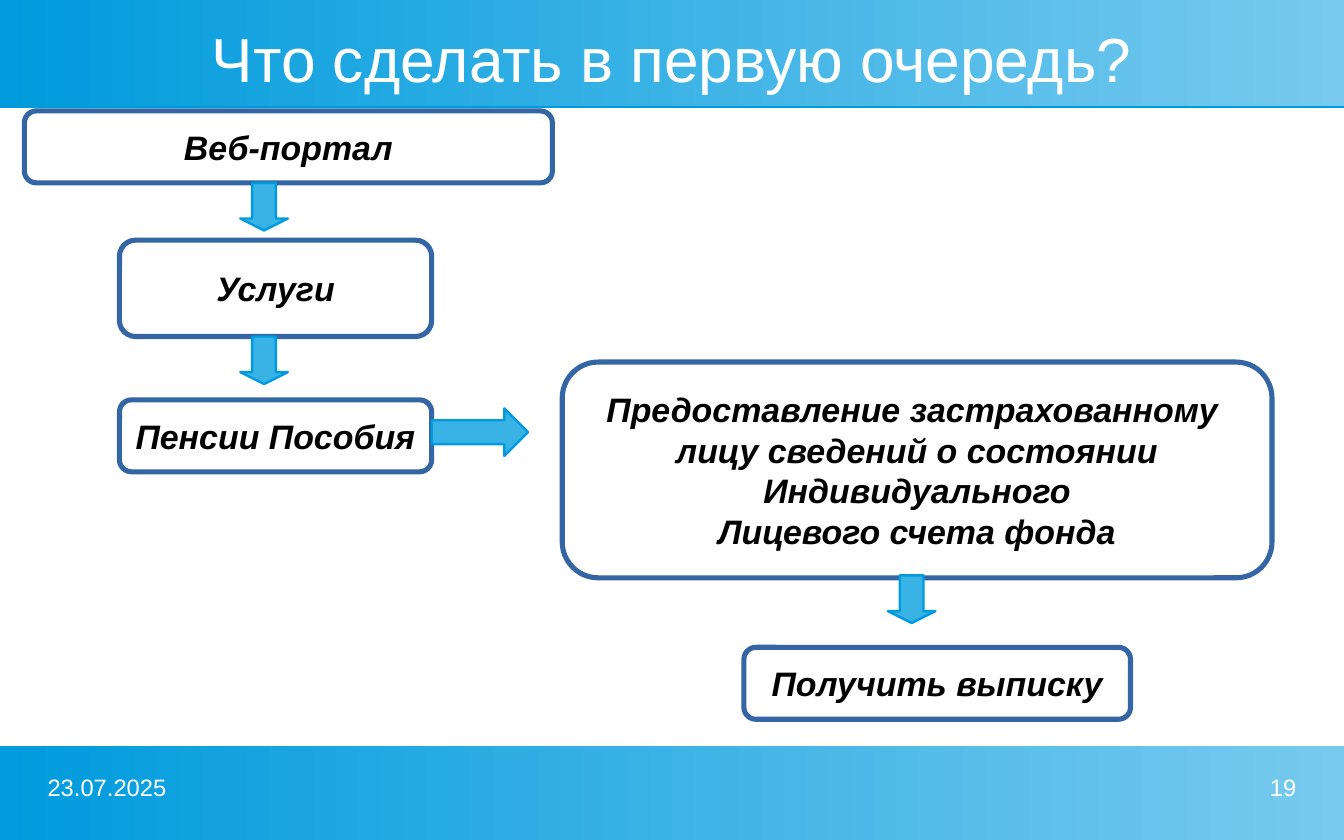
"""Build the flow slide about what to do first."""
import dataclasses
import typing

import lxml.etree
import pptx
import pptx.dml.color
import pptx.enum.shapes
import pptx.enum.text
import pptx.oxml.ns
import pptx.util

Inches = pptx.util.Inches
Pt = pptx.util.Pt
Kind = pptx.enum.shapes.MSO_SHAPE
Align = pptx.enum.text.PP_ALIGN
Anchor = pptx.enum.text.MSO_ANCHOR

PAGE_WIDTH, PAGE_HEIGHT = 11.02, 6.89
MARGIN = 0.39
ARROW = 0.39


@dataclasses.dataclass(frozen=True)
class Theme:
    """Colours and type sizes of the slide."""
    font: str = "Arial"
    white: str = "FFFFFF"
    ink: str = "000000"
    border: str = "3465A4"
    band_light: str = "77CAEE"
    band_dark: str = "009BDD"
    arrow: str = "39B2E5"
    title_size: float = 36.7
    step_size: float = 20
    footer_size: float = 14
    border_width: float = 3
    arrow_width: float = 1.42


THEME = Theme()


class Place(typing.NamedTuple):
    """Left, top, width and height in inches."""
    left: float
    top: float
    width: float
    height: float

    def lengths(self) -> list:
        """Return the four values as lengths."""
        return [Inches(value) for value in self]


class Step(typing.NamedTuple):
    """A rounded box of the flow."""
    place: Place
    lines: tuple


class Arrow(typing.NamedTuple):
    """A block arrow between two steps."""
    kind: Kind
    place: Place
    head: float


class Caption(typing.NamedTuple):
    """Plain white text on a band."""
    place: Place
    text: str
    size: float
    align: Align
    anchor: Anchor
    spacing: float


BANDS = (
    Place(0, 0, PAGE_WIDTH, 0.87),
    Place(0, 6.12, PAGE_WIDTH, 0.77),
)
STEPS = (
    Step(Place(0.2, 0.91, 4.33, 0.59), ("Веб-портал",)),
    Step(Place(0.98, 1.97, 2.56, 0.79), ("Услуги",)),
    Step(Place(0.98, 3.28, 2.56, 0.59), ("Пенсии Пособия",)),
    Step(Place(4.61, 2.97, 5.82, 1.77), (
        "Предоставление застрахованному ",
        "лицу сведений о состоянии",
        "Индивидуального",
        "Лицевого счета фонда",
    )),
    Step(Place(6.1, 5.31, 3.17, 0.59), ("Получить выписку",)),
)
ARROWS = (
    Arrow(Kind.DOWN_ARROW, Place(1.97, 1.5, ARROW, ARROW), 0.25),
    Arrow(Kind.DOWN_ARROW, Place(1.97, 2.76, ARROW, ARROW), 0.25),
    Arrow(Kind.RIGHT_ARROW, Place(3.54, 3.35, 0.79, ARROW), 0.5),
    Arrow(Kind.DOWN_ARROW, Place(7.28, 4.72, ARROW, ARROW), 0.25),
)
CAPTIONS = (
    Caption(Place(MARGIN, 0.22, 10.24, 0.58), "Что сделать в первую очередь?",
            THEME.title_size, Align.CENTER, Anchor.MIDDLE, 0.9),
    Caption(Place(8.07, 6.34, 2.56, 0.44), "19",
            THEME.footer_size, Align.RIGHT, Anchor.TOP, 1.0),
    Caption(Place(MARGIN, 6.34, 2.56, 0.44), "23.07.2025",
            THEME.footer_size, Align.LEFT, Anchor.TOP, 1.0),
)


def apply(target: typing.Any, values: dict) -> None:
    """Set every attribute named in the values."""
    for name, value in values.items():
        setattr(target, name, value)


def colour(code: str) -> pptx.dml.color.RGBColor:
    """Turn a hex code into a colour."""
    return pptx.dml.color.RGBColor.from_string(code)


def write(box: typing.Any, lines: tuple, ink: str, frame: dict,
          layout: dict, style: dict) -> None:
    """Put one paragraph per line into a box."""
    apply(box.text_frame, frame)
    for index, line in enumerate(lines):
        para = box.text_frame.add_paragraph() if index else box.text_frame.paragraphs[0]
        apply(para, layout)
        span = para.add_run()
        span.text = line
        apply(span.font, {"name": THEME.font, **style})
        span.font.color.rgb = colour(ink)


def draw_shape(page: typing.Any, kind: Kind, place: Place, fill: str,
               line: str, width: float) -> typing.Any:
    """Draw a filled and outlined preset shape."""
    box = page.shapes.add_shape(kind, *place.lengths())
    box.shadow.inherit = False
    box.fill.solid()
    box.fill.fore_color.rgb = colour(fill)
    box.line.color.rgb = colour(line)
    box.line.width = Pt(width)
    return box


def draw_band(page: typing.Any, place: Place) -> None:
    """Draw a gradient band with a thin lower shadow."""
    box = page.shapes.add_shape(Kind.RECTANGLE, *place.lengths())
    box.shadow.inherit = False
    box.line.fill.background()
    box.fill.gradient()
    box.fill.gradient_angle = 180
    codes = (THEME.band_light, THEME.band_dark)
    for position, (stop, code) in enumerate(zip(box.fill.gradient_stops, codes)):
        stop.color.rgb = colour(code)
        stop.position = position
    name = pptx.oxml.ns.qn
    effects = box.element.spPr.find(name("a:effectLst"))
    shadow = lxml.etree.SubElement(effects, name("a:outerShdw"), {
        "blurRad": "0", "dist": str(Pt(0.9)), "dir": "5400000", "rotWithShape": "0"})
    lxml.etree.SubElement(shadow, name("a:srgbClr"), {"val": THEME.band_dark})


def draw_step(page: typing.Any, step: Step) -> None:
    """Draw a rounded box with its bold italic lines."""
    box = draw_shape(page, Kind.ROUNDED_RECTANGLE, step.place,
                     THEME.white, THEME.border, THEME.border_width)
    side, edge = Inches(0.11), Inches(0.06)
    write(box, step.lines, THEME.ink,
          {"margin_left": side, "margin_right": side, "margin_top": edge,
           "margin_bottom": edge, "word_wrap": False,
           "vertical_anchor": Anchor.MIDDLE},
          {"alignment": Align.CENTER},
          {"size": Pt(THEME.step_size), "bold": True, "italic": True})


def draw_arrow(page: typing.Any, arrow: Arrow) -> None:
    """Draw a block arrow."""
    box = draw_shape(page, arrow.kind, arrow.place,
                     THEME.arrow, THEME.band_dark, THEME.arrow_width)
    box.adjustments[0] = 0.5
    box.adjustments[1] = arrow.head


def draw_caption(page: typing.Any, caption: Caption) -> None:
    """Draw white text without margins."""
    box = page.shapes.add_textbox(*caption.place.lengths())
    write(box, (caption.text,), THEME.white,
          {"margin_left": 0, "margin_right": 0, "margin_top": 0,
           "margin_bottom": 0, "word_wrap": True,
           "vertical_anchor": caption.anchor},
          {"alignment": caption.align, "line_spacing": caption.spacing},
          {"size": Pt(caption.size)})


def main() -> None:
    """Build and save the deck."""
    deck = pptx.Presentation()
    apply(deck, {"slide_width": Inches(PAGE_WIDTH), "slide_height": Inches(PAGE_HEIGHT)})
    page = deck.slides.add_slide(deck.slide_layouts[6])
    for draw, items in ((draw_band, BANDS), (draw_step, STEPS),
                        (draw_arrow, ARROWS), (draw_caption, CAPTIONS)):
        for item in items:
            draw(page, item)
    deck.save("out.pptx")


if __name__ == "__main__":
    main()
